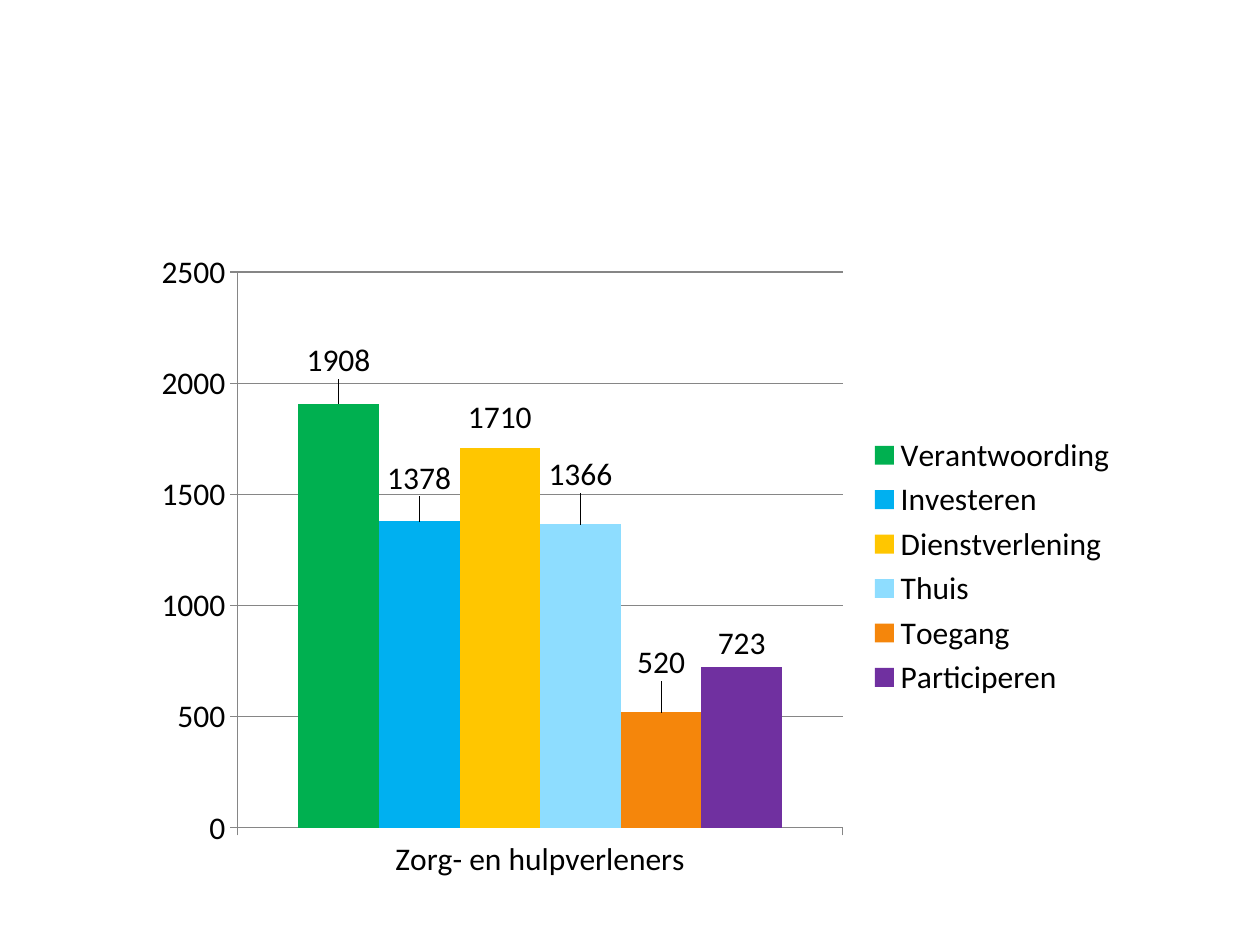
from lxml import etree
from pptx import Presentation
from pptx.chart.data import CategoryChartData
from pptx.dml.color import RGBColor
from pptx.enum.chart import XL_CHART_TYPE, XL_LABEL_POSITION, XL_LEGEND_POSITION, XL_TICK_MARK
from pptx.oxml.ns import qn
from pptx.util import Inches, Pt

COLUMNS = XL_CHART_TYPE.COLUMN_CLUSTERED
ABOVE = XL_LABEL_POSITION.OUTSIDE_END
RIGHT = XL_LEGEND_POSITION.RIGHT
OUTSIDE = XL_TICK_MARK.OUTSIDE

COLORS = {
    "text": "000000",
    "grid": "868686",
    "Verantwoording": "00B050",
    "Investeren": "00B0F0",
    "Dienstverlening": "FFC600",
    "Thuis": "8EDDFF",
    "Toegang": "F5860B",
    "Participeren": "7030A0",
}
THEMES = [
    ("Verantwoording", 1908, -0.03),
    ("Investeren", 1378, -0.03),
    ("Dienstverlening", 1710, -0.01),
    ("Thuis", 1366, -0.04),
    ("Toegang", 520, -0.04),
    ("Participeren", 723, 0),
]


def add_layout(parent, index, **settings):
    layout = etree.Element(qn("c:layout"))
    manual = etree.SubElement(layout, qn("c:manualLayout"))
    for tag, value in settings.items():
        etree.SubElement(manual, qn(f"c:{tag}")).set("val", str(value))
    parent.insert(index, layout)


def style_font(font):
    font.name = "Calibri"
    font.size = Pt(18)
    font.color.rgb = RGBColor.from_string(COLORS["text"])


prs = Presentation()
prs.slide_width, prs.slide_height = Inches(10), Inches(7.5)
slide = prs.slides.add_slide(prs.slide_layouts[6])

votes = CategoryChartData()
votes.categories = ["Zorg- en hulpverleners"]
for theme, count, lift in THEMES:
    votes.add_series(theme, [count])

chart = slide.shapes.add_chart(
    COLUMNS, Inches(1.1), Inches(1.9), Inches(7.87), Inches(5.19), votes
).chart
chart.has_title = False
style_font(chart.font)

plot_area = chart.element.find(".//" + qn("c:plotArea"))
for old_layout in plot_area.findall(qn("c:layout")):
    plot_area.remove(old_layout)
add_layout(plot_area, 0, layoutTarget="inner", xMode="edge", yMode="edge",
           x=0.1, y=0.05, w=0.61, h=0.85)

chart.has_legend = True
chart.legend.position = RIGHT
chart.legend.include_in_layout = False
style_font(chart.legend.font)

chart.value_axis.minimum_scale = 0
chart.value_axis.maximum_scale = 2500
chart.value_axis.major_unit = 500
chart.value_axis.has_major_gridlines = True
gridlines = chart.value_axis.major_gridlines.format.line
for line in (gridlines, chart.value_axis.format.line, chart.category_axis.format.line):
    line.color.rgb = RGBColor.from_string(COLORS["grid"])
    line.width = Pt(0.75)
for axis in (chart.value_axis, chart.category_axis):
    axis.major_tick_mark = OUTSIDE
    style_font(axis.tick_labels.font)

bars = chart.plots[0]
bars.gap_width = 150
bars.overlap = 0
bars.vary_by_categories = False
for series, (theme, count, lift) in zip(bars.series, THEMES):
    series.format.fill.solid()
    series.format.fill.fore_color.rgb = RGBColor.from_string(COLORS[theme])
    labels = series.data_labels
    labels.show_value = True
    labels.position = ABOVE
    style_font(labels.font)
    if lift:
        label = series.points[0].data_label
        style_font(label.font)
        label.position = ABOVE
        add_layout(series.data_labels._element.find(qn("c:dLbl")), 1, x=0, y=lift)

prs.save("out.pptx")
